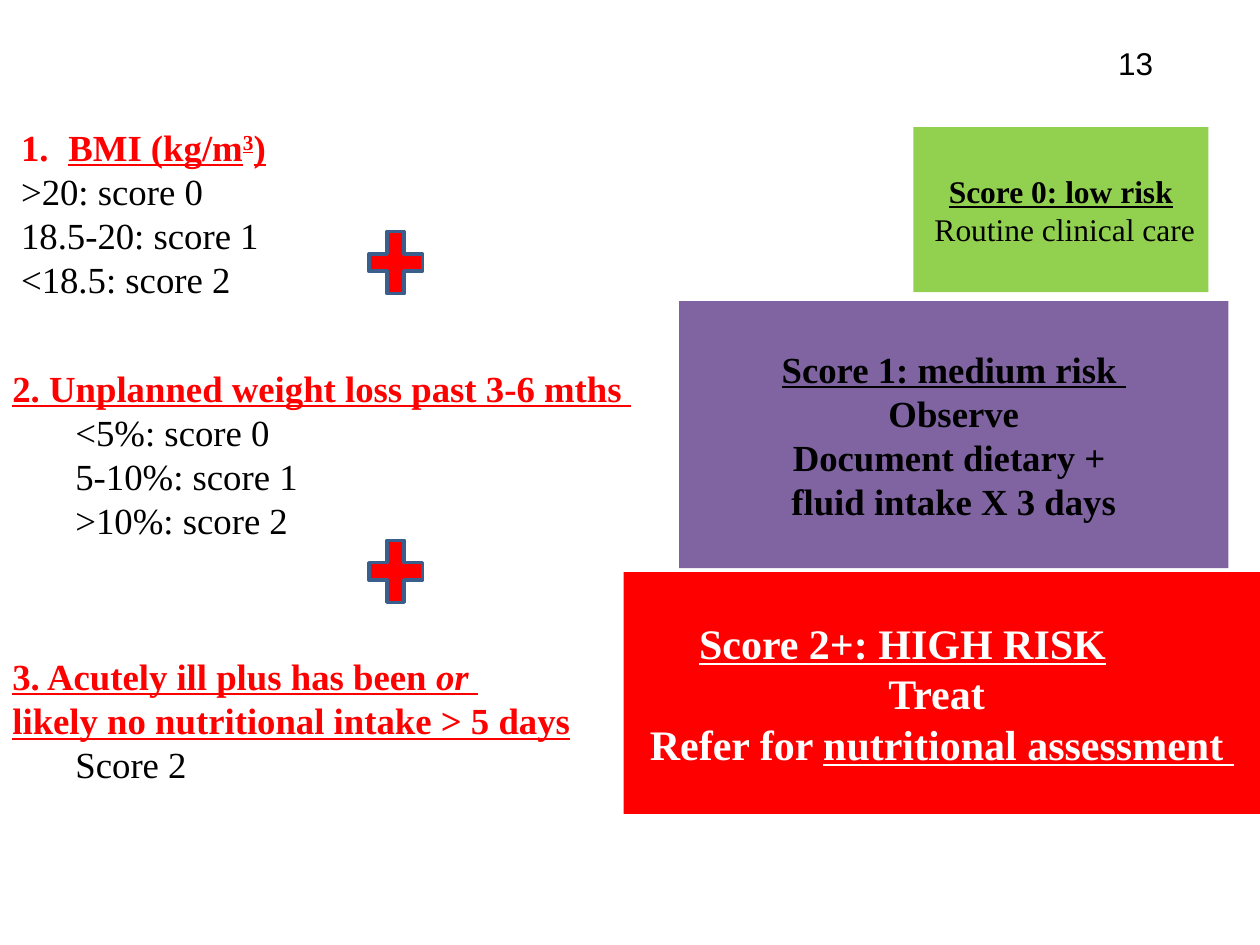
from dataclasses import dataclass

from lxml.etree import SubElement
from pptx import Presentation
from pptx.dml.color import RGBColor
from pptx.enum.shapes import MSO_SHAPE as Shape
from pptx.enum.text import MSO_ANCHOR as Anchor, PP_ALIGN as Align
from pptx.oxml.ns import qn
from pptx.util import Pt

RED = RGBColor(0xFF, 0x00, 0x00)
GREEN = RGBColor(0x92, 0xD0, 0x50)
PURPLE = RGBColor(0x80, 0x64, 0xA2)
BLUE = RGBColor(0x3A, 0x5F, 0x8C)
BLACK = RGBColor(0x00, 0x00, 0x00)
WHITE = RGBColor(0xFF, 0xFF, 0xFF)
SERIF = "Times New Roman"


@dataclass
class Run:
    text: str
    bold: bool = False
    underline: bool = False
    italic: bool = False
    raised: bool = False
    color: RGBColor = BLACK


@dataclass
class Para:
    runs: list[Run]
    align: Align = Align.LEFT
    indent: float = 0
    number: bool = False
    tabs: tuple[float, ...] = ()


@dataclass
class Box:
    left: float
    top: float
    width: float
    height: float
    paras: list[Para]
    size: float = 21
    fill: RGBColor | None = None
    font: str = SERIF
    wrap: bool = True


def heading(text: str, **kw) -> Run:
    return Run(text, bold=True, underline=True, color=RED, **kw)


def scores(*lines: str, indent: float = 0) -> list[Para]:
    return [Para([Run(line)], indent=indent) for line in lines]


def centred(text: str, **kw) -> Para:
    return Para([Run(text, **kw)], Align.CENTER)


def format_para(p, para: Para) -> None:
    p.alignment = para.align
    pPr = p._p.get_or_add_pPr()
    pPr.set("marL", str(Pt(para.indent)))
    pPr.set("indent", str(Pt(-para.indent if para.number else 0)))
    if para.number:
        SubElement(pPr, qn("a:buFont"), typeface="+mj-lt")
        SubElement(pPr, qn("a:buAutoNum"), type="arabicPeriod")
    if para.tabs:
        tab_list = SubElement(pPr, qn("a:tabLst"))
        for pos in para.tabs:
            SubElement(tab_list, qn("a:tab"), pos=str(Pt(pos)), algn="l")


def add_run(p, run: Run, size: float, font: str) -> None:
    r = p.add_run()
    r.text = run.text
    f = r.font
    f.name, f.size = font, Pt(size)
    f.bold, f.italic, f.underline = run.bold, run.italic, run.underline
    f.color.rgb = run.color
    if run.raised:
        r._r.get_or_add_rPr().set("baseline", "30000")


def add_box(s, box: Box) -> None:
    at = [Pt(v) for v in (box.left, box.top, box.width, box.height)]
    if box.fill is None:
        sp = s.shapes.add_textbox(*at)
    else:
        sp = s.shapes.add_shape(Shape.RECTANGLE, *at)
        sp.shadow.inherit = False
        sp.fill.solid()
        sp.fill.fore_color.rgb = box.fill
        sp.line.fill.background()
    tf = sp.text_frame
    tf.word_wrap = box.wrap
    tf.vertical_anchor = Anchor.TOP if box.fill is None else Anchor.MIDDLE
    for i, para in enumerate(box.paras):
        p = tf.add_paragraph() if i else tf.paragraphs[0]
        format_para(p, para)
        for run in para.runs:
            add_run(p, run, box.size, box.font)


def add_plus(s, left: float, top: float) -> None:
    sp = s.shapes.add_shape(Shape.MATH_PLUS, Pt(left), Pt(top), Pt(41.8), Pt(48.2))
    sp.shadow.inherit = False
    sp.fill.solid()
    sp.fill.fore_color.rgb = RED
    sp.line.color.rgb = BLUE
    sp.line.width = Pt(2)


CRITERIA = [
    Box(5, 67.7, 296, 131, [
        Para([heading("BMI (kg/m"), heading("3", raised=True), heading(")\t")],
             indent=27, number=True, tabs=(166,)),
        *scores(">20: score 0", "18.5-20: score 1", "<18.5: score 2"),
    ]),
    Box(0, 205.2, 372, 131, [
        Para([heading("2. Unplanned weight loss past 3-6 mths ")]),
        *scores("<5%: score 0", "5-10%: score 1", ">10%: score 2", indent=36),
    ]),
    Box(0, 370, 411, 105, [
        Para([heading("3. Acutely ill plus has been "), heading("or", italic=True), heading(" ")]),
        Para([heading("likely no nutritional intake > 5 days")]),
        *scores("Score 2", indent=36),
    ]),
]

RISKS = [
    Box(522, 72.7, 168.5, 94.3, [
        centred("Score 0: low risk", bold=True, underline=True),
        centred(" Routine clinical care"),
    ], size=18, fill=GREEN),
    Box(388.1, 172.1, 313.9, 152.6, [
        centred("Score 1: medium risk ", bold=True, underline=True),
        *[centred(t, bold=True)
          for t in ("Observe", "Document dietary + ", "fluid intake X 3 days")],
    ], fill=PURPLE),
    Box(356.4, 326.9, 363.6, 138.2, [
        Para([Run("\t"),
              Run("Score 2+: HIGH RISK\t", bold=True, underline=True, color=WHITE)],
             tabs=(28.4, 321)),
        centred("Treat ", bold=True, color=WHITE),
        Para([Run("Refer for ", bold=True, color=WHITE),
              Run("nutritional assessment ", bold=True, underline=True, color=WHITE)],
             Align.CENTER),
    ], size=24, fill=RED),
]

PAGE_NUMBER = Box(631.4, 21.6, 34.6, 28.8, [Para([Run("13")], Align.RIGHT)],
                  size=18, font="Arial", wrap=False)


def main() -> None:
    prs = Presentation()
    prs.slide_width, prs.slide_height = Pt(720), Pt(540)
    s = prs.slides.add_slide(prs.slide_layouts[6])
    for box in CRITERIA:
        add_box(s, box)
    for top in (126, 302.4):
        add_plus(s, 205.2, top)
    for box in [*RISKS, PAGE_NUMBER]:
        add_box(s, box)
    prs.save("out.pptx")


if __name__ == "__main__":
    main()
